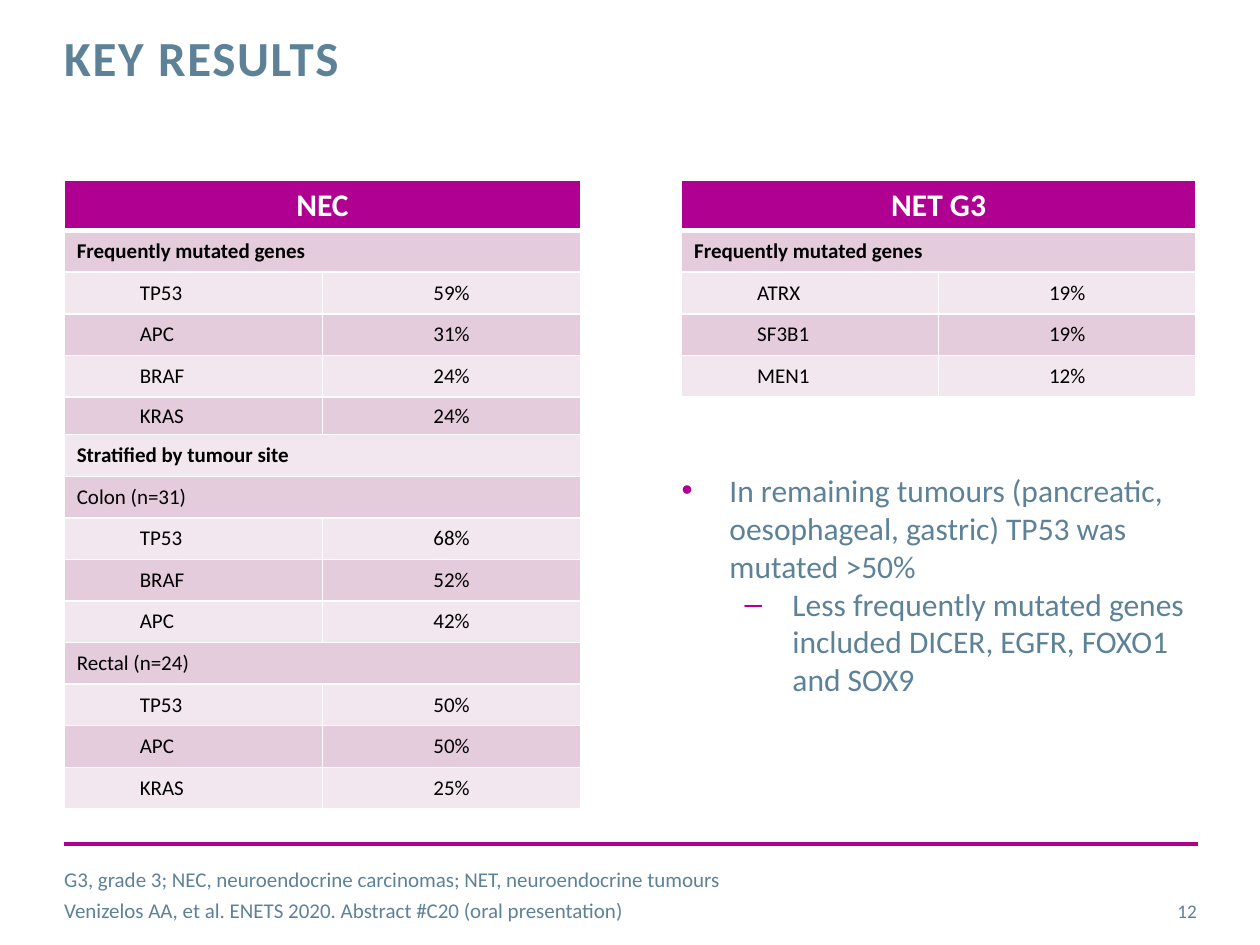
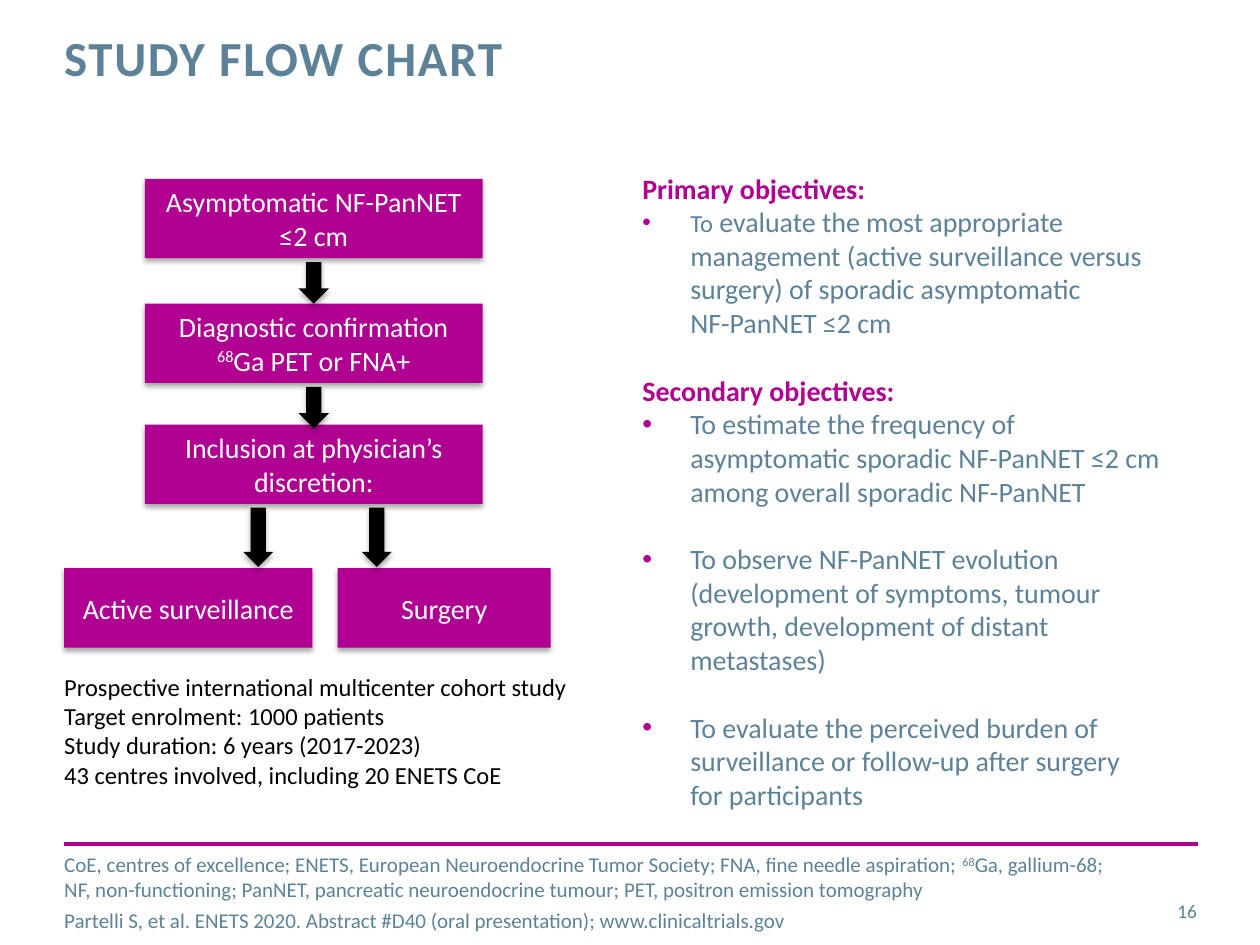
from dataclasses import dataclass

from lxml import etree
from pptx import Presentation
from pptx import util as u
from pptx.dml.color import RGBColor
from pptx.enum import shapes, text
from pptx.oxml.ns import qn


@dataclass(frozen=True)
class Theme:
    """Colours, font and type sizes shared by the slides."""
    magenta: str = "B00091"
    slate: str = "5D8298"
    dark_band: str = "E4CCDC"
    light_band: str = "F2E7EE"
    white: str = "FFFFFF"
    black: str = "000000"
    font: str = "Calibri"
    title: int = 28
    heading: int = 18
    body: int = 16
    detail: int = 14
    small: int = 12
    number: int = 11


@dataclass(frozen=True)
class Box:
    """A rectangle in inches."""
    left: float
    top: float
    width: float
    height: float

    def inner(self, left, top, width, height):
        """Return a box placed relative to this one."""
        return Box(self.left + left, self.top + top, width, height)

    def lengths(self):
        """Return the four lengths for python-pptx."""
        return [u.Inches(value) for value in (self.left, self.top, self.width, self.height)]


THEME = Theme()
LEFT, RIGHT = 0.51, 9.51
FREQUENT, STRATIFIED = "Frequently mutated genes", "Stratified by tumour site"
BULLET_INDENT = 0.38

NEC_ROWS = [
    FREQUENT, ("TP53", "59%"), ("APC", "31%"), ("BRAF", "24%"), ("KRAS", "24%"),
    STRATIFIED,
    "Colon (n=31)", ("TP53", "68%"), ("BRAF", "52%"), ("APC", "42%"),
    "Rectal (n=24)", ("TP53", "50%"), ("APC", "50%"), ("KRAS", "25%"),
]
NET_ROWS = [FREQUENT, ("ATRX", "19%"), ("SF3B1", "19%"), ("MEN1", "12%")]


def add_element(parent, tag, **attributes):
    """Append a DrawingML element to a parent."""
    return etree.SubElement(parent, qn(tag), attributes)


def write(paragraph, content, size, color, bold=False, align=None):
    """Fill a paragraph; bars part the runs, and a run of 68 is raised."""
    for index, line in enumerate(content.split("\n")):
        if index:
            paragraph.add_line_break()
        for piece in line.split("|"):
            run = paragraph.add_run()
            run.text = piece
            run.font.name, run.font.size, run.font.bold = THEME.font, u.Pt(size), bold
            run.font.color.rgb = RGBColor.from_string(color)
            if piece == "68":
                run.font._element.set("baseline", "30000")
    paragraph.alignment = align


def indent(paragraph, left, hanging=0):
    """Set the left and hanging indents of a paragraph."""
    properties = paragraph._p.get_or_add_pPr()
    properties.set("marL", str(u.Inches(left)))
    properties.set("indent", str(-u.Inches(hanging)))
    return properties


def add_bullet(paragraph, character, left=BULLET_INDENT):
    """Give a paragraph a magenta bullet with a hanging indent."""
    properties = indent(paragraph, left, BULLET_INDENT)
    add_element(add_element(properties, "a:buClr"), "a:srgbClr", val=THEME.magenta)
    add_element(properties, "a:buFont", typeface="Arial")
    add_element(properties, "a:buChar", char=character)


def add_text_frame(slide, box, anchor=text.MSO_ANCHOR.TOP, side=0, end=0):
    """Add a wrapping text box and return its frame."""
    frame = slide.shapes.add_textbox(*box.lengths()).text_frame
    frame.word_wrap = True
    frame.vertical_anchor = anchor
    frame.margin_left = frame.margin_right = u.Inches(side)
    frame.margin_top = frame.margin_bottom = u.Inches(end)
    return frame


def paragraphs(frame, count):
    """Return the first paragraph of a frame and as many new ones as needed."""
    return [frame.paragraphs[0]] + [frame.add_paragraph() for _ in range(count - 1)]


def add_lines(frame, lines, size, color, space_after=0):
    """Write plain lines, one paragraph each."""
    for paragraph, line in zip(paragraphs(frame, len(lines)), lines):
        write(paragraph, line, size, color)
        paragraph.space_after = u.Pt(space_after)


def add_base_slide(presentation, title, number):
    """Add a slide with the shared title, rule and slide number."""
    slide = presentation.slides.add_slide(presentation.slide_layouts[6])
    rule = slide.shapes.add_connector(
        shapes.MSO_CONNECTOR.STRAIGHT,
        u.Inches(LEFT), u.Inches(6.7), u.Inches(RIGHT), u.Inches(6.7))
    rule.line.color.rgb = RGBColor.from_string(THEME.magenta)
    rule.line.width = u.Pt(2)
    add_element(rule._element.spPr, "a:effectLst")

    heading = add_text_frame(slide, Box(LEFT, 0.27, 7.17, 0.88)).paragraphs[0]
    write(heading, title, THEME.title, THEME.slate, bold=True)
    heading.line_spacing = u.Pt(30)
    heading.runs[0].font._element.set("spc", "100")

    frame = add_text_frame(slide, Box(8.86, 7.03, 0.64, 0.4), text.MSO_ANCHOR.MIDDLE)
    write(frame.paragraphs[0], number, THEME.number, THEME.slate, align=text.PP_ALIGN.RIGHT)
    return slide


def add_footnotes(slide, box, lines, anchor=text.MSO_ANCHOR.TOP):
    """Add the abbreviations and the reference under the rule."""
    add_lines(add_text_frame(slide, box, anchor), lines, THEME.small, THEME.slate, 3)


def style_cell(cell, fill, bottom=1):
    """Give a cell white borders and a solid fill."""
    properties = cell._tc.get_or_add_tcPr()
    for side, width in (("L", 1), ("R", 1), ("T", 1), ("B", bottom)):
        line = add_element(properties, f"a:ln{side}", w=str(u.Pt(width)))
        add_element(add_element(line, "a:solidFill"), "a:srgbClr", val=THEME.white)
    cell.fill.solid()
    cell.fill.fore_color.rgb = RGBColor.from_string(fill)


def add_gene_table(slide, box, title, rows, heights=None):
    """Add a banded table of genes and mutation rates under a title row."""
    table = slide.shapes.add_table(len(rows) + 1, 2, *box.lengths()).table
    table.first_row = table.horz_banding = False
    for column in table.columns:
        column.width = u.Inches(box.width / 2)

    table.rows[0].height = u.Inches(0.4)
    for cell in table.rows[0].cells:
        style_cell(cell, THEME.magenta, bottom=3)
    table.cell(0, 0).merge(table.cell(0, 1))
    write(table.cell(0, 0).text_frame.paragraphs[0], title, THEME.heading, THEME.white,
          bold=True, align=text.PP_ALIGN.CENTER)

    for index, row in enumerate(rows, start=1):
        table.rows[index].height = u.Inches((heights or {}).get(index, 0.33))
        for cell in table.rows[index].cells:
            style_cell(cell, THEME.dark_band if index % 2 else THEME.light_band)
            cell.vertical_anchor = text.MSO_ANCHOR.MIDDLE
        label, value = table.cell(index, 0), table.cell(index, 1)
        paragraph = label.text_frame.paragraphs[0]
        if isinstance(row, str):
            label.merge(value)
            write(paragraph, row, THEME.small, THEME.black, row in (FREQUENT, STRATIFIED))
        else:
            indent(paragraph, 0.5)
            write(paragraph, row[0], THEME.small, THEME.black)
            write(value.text_frame.paragraphs[0], row[1], THEME.small, THEME.black,
                  align=text.PP_ALIGN.CENTER)


def add_remarks(slide, box):
    """Add the remarks on the remaining tumours."""
    frame = add_text_frame(slide, box, end=0.05)
    remark, detail = paragraphs(frame, 2)
    add_bullet(remark, "•")
    write(remark, "In remaining tumours (pancreatic, oesophageal, gastric) TP53 was mutated >50%",
          THEME.heading, THEME.slate)
    detail.level = 1
    add_bullet(detail, "–", left=0.88)
    write(detail, "Less frequently mutated genes included DICER, EGFR, FOXO1 \nand SOX9",
          THEME.heading, THEME.slate)


def add_shadowed_shape(slide, kind, box, fill):
    """Add a preset shape with a solid fill and a soft shadow below."""
    shape = slide.shapes.add_shape(kind, *box.lengths())
    shape.fill.solid()
    shape.fill.fore_color.rgb = RGBColor.from_string(fill)
    shape.line.fill.background()
    shape.shadow.inherit = False
    shadow = add_element(shape._element.spPr.find(qn("a:effectLst")), "a:outerShdw",
                         blurRad=str(u.Pt(3.1)), dist=str(u.Pt(1.8)), dir="5400000",
                         rotWithShape="0")
    add_element(add_element(shadow, "a:srgbClr", val=THEME.black), "a:alpha", val="35000")
    return shape


def add_flow_chart(slide, box):
    """Add three steps that lead to two study arms."""
    step_height, gap, arrow_width = 0.63, 0.03, 0.24
    steps = [
        ("Asymptomatic NF-PanNET ≤2 cm", 0.64, 0, 2.68),
        ("Diagnostic confirmation |68|Ga PET or FNA+", 0.64, 0.99, 2.68),
        ("Inclusion at physician’s discretion:", 0.64, 1.95, 2.68),
        ("Active surveillance", 0, 3.09, 1.97),
        ("Surgery", 2.17, 3.09, 1.69),
    ]
    for label, left, top, width in steps:
        shape = add_shadowed_shape(slide, shapes.MSO_SHAPE.RECTANGLE,
                                   box.inner(left, top, width, step_height), THEME.magenta)
        shape.text_frame.word_wrap = True
        shape.text_frame.vertical_anchor = text.MSO_ANCHOR.MIDDLE
        write(shape.text_frame.paragraphs[0], label, THEME.body, THEME.white,
              align=text.PP_ALIGN.CENTER)
    for step, left, height in ((0, 1.86, 0.33), (1, 1.86, 0.33), (2, 1.42, 0.47), (2, 2.36, 0.47)):
        top = steps[step][2] + step_height + gap
        add_shadowed_shape(slide, shapes.MSO_SHAPE.DOWN_ARROW,
                           box.inner(left, top, arrow_width, height), THEME.black)


def add_objectives(slide, box):
    """Add the primary and secondary objectives."""
    groups = [
        ("Primary objectives:", [
            "To| evaluate the most appropriate management (active surveillance versus surgery) "
            "of sporadic asymptomatic \nNF-PanNET ≤2 cm"]),
        ("Secondary objectives:", [
            "To estimate the frequency of asymptomatic sporadic NF-PanNET ≤2 cm "
            "among overall sporadic NF-PanNET",
            "To observe NF-PanNET evolution (development of symptoms, tumour growth, "
            "development of distant metastases)",
            "To evaluate the perceived burden of surveillance or follow-up after surgery "
            "\nfor participants"]),
    ]
    line_gap = u.Pt(19.5)
    frame = add_text_frame(slide, box, side=0.1, end=0.05)
    remaining = iter(paragraphs(frame, sum(1 + len(items) for _, items in groups)))
    for group, (heading, items) in enumerate(groups):
        paragraph = next(remaining)
        write(paragraph, heading, THEME.body, THEME.magenta, bold=True)
        if group:
            paragraph.space_before = line_gap
        for index, item in enumerate(items):
            paragraph = next(remaining)
            add_bullet(paragraph, "•")
            write(paragraph, item, THEME.body, THEME.slate)
            if index:
                paragraph.space_before = line_gap
    frame.paragraphs[1].runs[0].font.size = u.Pt(THEME.detail)


def build_results_slide(presentation):
    """Build the slide with the two gene tables."""
    slide = add_base_slide(presentation, "KEY RESULTS", "12")
    add_gene_table(slide, Box(LEFT, 1.43, 4.1, 5), "NEC", NEC_ROWS, heights={5: 0.3})
    add_gene_table(slide, Box(5.41, 1.43, 4.08, 1.72), "NET G3", NET_ROWS)
    add_remarks(slide, Box(5.41, 3.69, 4.33, 1.92))
    add_footnotes(slide, Box(LEFT, 6.9, 6.66, 0.4), [
        "G3, grade 3; NEC, neuroendocrine carcinomas; NET, neuroendocrine tumours",
        "Venizelos AA, et al. ENETS 2020. Abstract #C20 (oral presentation)",
    ], text.MSO_ANCHOR.MIDDLE)


def build_study_slide(presentation):
    """Build the slide with the study flow chart and objectives."""
    slide = add_base_slide(presentation, "STUDY FLOW CHART", "16")
    add_flow_chart(slide, Box(LEFT, 1.42, 3.86, 3.72))
    add_lines(add_text_frame(slide, Box(LEFT, 5.33, 4.02, 1.19)), [
        "Prospective international multicenter cohort study",
        "Target enrolment: 1000 patients",
        "Study duration: 6 years (2017-2023)",
        "43 centres involved, including 20 ENETS CoE",
    ], THEME.detail, THEME.black)
    add_objectives(slide, Box(5, 1.31, 4.41, 5.22))
    add_footnotes(slide, Box(LEFT, 6.76, 8.35, 0.36), [
        "CoE, centres of excellence; ENETS, European Neuroendocrine Tumor Society; "
        "FNA, fine needle aspiration; |68|Ga, gallium-68; NF, non-functioning; "
        "PanNET, pancreatic neuroendocrine tumour; PET, positron emission tomography",
        "Partelli S, et al. ENETS 2020. Abstract #D40 (oral presentation); www.clinicaltrials.gov",
    ])


def main():
    """Build and save the presentation."""
    presentation = Presentation()
    presentation.slide_width, presentation.slide_height = u.Inches(10), u.Inches(7.5)
    build_results_slide(presentation)
    build_study_slide(presentation)
    presentation.save("out.pptx")


if __name__ == "__main__":
    main()
